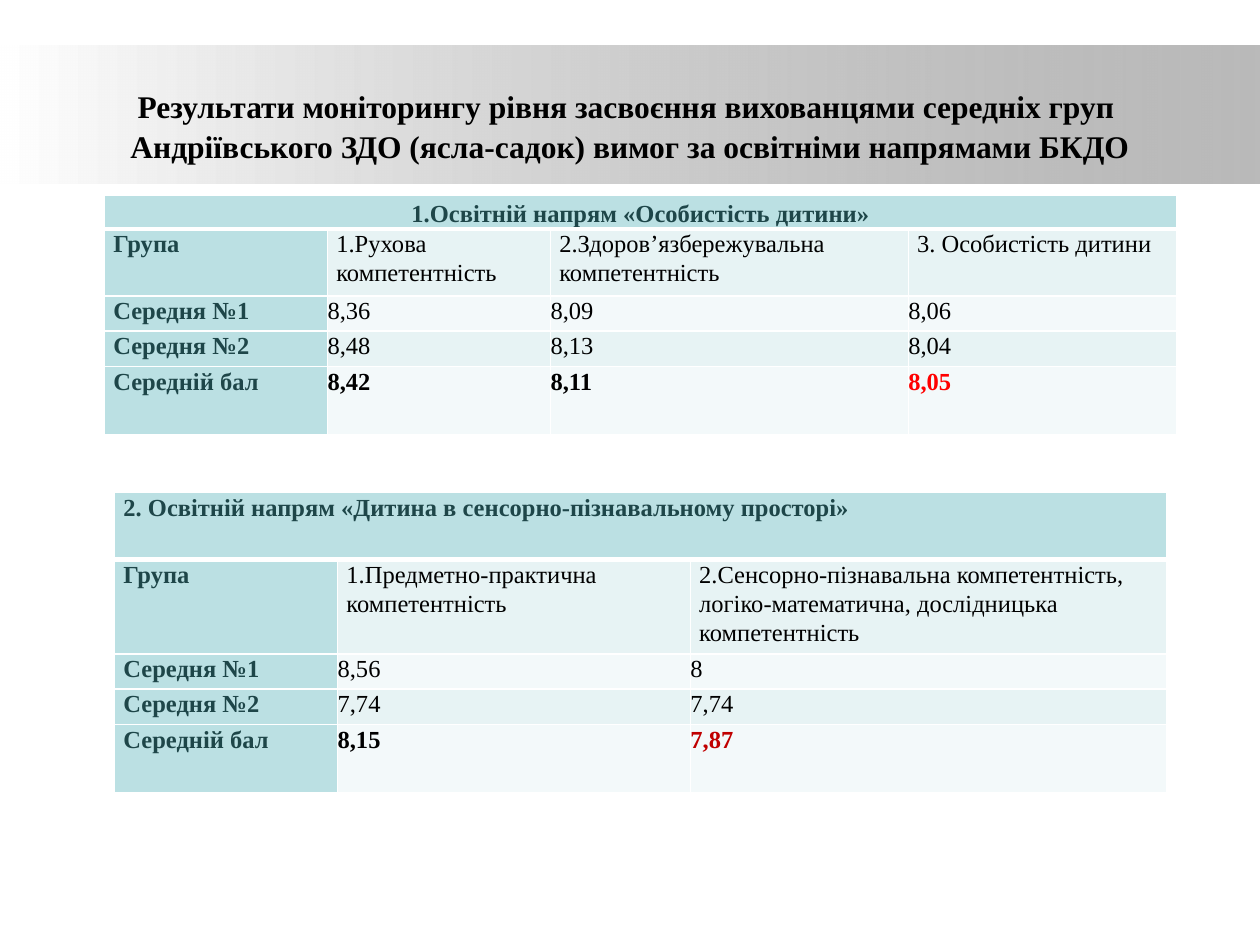
import pptx
import pptx.util
import pptx.dml.color
import pptx.enum.shapes
import pptx.enum.text
import pptx.oxml
import lxml.etree
from pptx.oxml.ns import qn

Inches, Pt = pptx.util.Inches, pptx.util.Pt
ALIGN, ANCHOR = pptx.enum.text.PP_ALIGN, pptx.enum.text.MSO_ANCHOR

HEADING = ("Результати моніторингу рівня засвоєння вихованцями середніх груп \n"
           "Андріївського ЗДО (ясла-садок) вимог за освітніми напрямами БКДО")
DARK, BLACK, WHITE = "1E4649", "000000", "FFFFFF"
LABEL_FILL, BANDS = "BBE0E3", ("F3F9FA", "E7F3F4")

DIRECTIONS = [
    {
        "title": "1.Освітній напрям «Особистість дитини»",
        "title_paragraph": {"alignment": ALIGN.CENTER, "line_spacing": 1.15},
        "title_anchor": ANCHOR.MIDDLE,
        "corner": (0.83, 1.55),
        "widths": (1.77, 1.77, 2.84, 2.13),
        "heights": (0.25, 0.53, 0.28, 0.28, 0.54),
        "weak_score": "FF0000",
        "rows": [
            ("Група", "1.Рухова компетентність",
             "2.Здоров’язбережувальна компетентність", "3. Особистість дитини"),
            ("Середня №1", "8,36", "8,09", "8,06"),
            ("Середня №2", "8,48", "8,13", "8,04"),
            ("Середній бал", "8,42", "8,11", "8,05"),
        ],
    },
    {
        "title": "2. Освітній напрям «Дитина в сенсорно-пізнавальному просторі»",
        "title_paragraph": {},
        "title_anchor": ANCHOR.TOP,
        "corner": (0.91, 3.91),
        "widths": (1.77, 2.8, 3.78),
        "heights": (0.53, 0.53, 0.28, 0.28, 0.54),
        "weak_score": "C00000",
        "rows": [
            ("Група", "1.Предметно-практична компетентність",
             "2.Сенсорно-пізнавальна компетентність, логіко-математична, "
             "дослідницька компетентність"),
            ("Середня №1", "8,56", "8"),
            ("Середня №2", "7,74", "7,74"),
            ("Середній бал", "8,15", "7,87"),
        ],
    },
]


def rgb(value):
    return pptx.dml.color.RGBColor.from_string(value)


def apply(target, values):
    for key, value in values.items():
        setattr(target, key, value)


def write(frame, text, size, color, bold, paragraph_format):
    paragraph = frame.paragraphs[0]
    paragraph.text = text
    apply(paragraph, {"line_spacing": 1.07, **paragraph_format})
    for run in paragraph.runs:
        apply(run.font, {"name": "Times New Roman", "size": Pt(size), "bold": bold})
        run.font.color.rgb = rgb(color)


def add_borders(cell, row):
    widths = {"lnL": 1, "lnR": 1, "lnT": 3 if row == 1 else 1, "lnB": 3 if row == 0 else 1}
    properties = cell._tc.get_or_add_tcPr()
    for side, width in widths.items():
        line = lxml.etree.SubElement(properties, qn("a:" + side), w=str(Pt(width)))
        fill = lxml.etree.SubElement(line, qn("a:solidFill"))
        lxml.etree.SubElement(fill, qn("a:srgbClr"), val=WHITE)


def format_cell(cell, row, text, fill, color, bold, inset, paragraph_format):
    add_borders(cell, row)
    cell.fill.solid()
    cell.fill.fore_color.rgb = rgb(fill)
    apply(cell, {"margin_left": Inches(inset), "margin_right": Inches(inset),
                 "margin_top": 0, "margin_bottom": 0})
    write(cell.text_frame, text, 14, color, bold, paragraph_format)


def add_band(slide):
    band = slide.shapes.add_shape(pptx.enum.shapes.MSO_SHAPE.RECTANGLE,
                                  0, Inches(0.36), Inches(10), Inches(1.1))
    band.shadow.inherit = False
    band.line.fill.background()
    band.fill.gradient()
    band.fill.gradient_angle = 0
    for stop, color, position in zip(band.fill.gradient_stops, (WHITE, "808080"), (0, 1)):
        stop.color.rgb = rgb(color)
        stop.position = position
    end_color = band._element.spPr.findall(".//" + qn("a:srgbClr"))[-1]
    lxml.etree.SubElement(end_color, qn("a:alpha"), val="54000")


def add_heading(slide):
    heading = slide.shapes.add_textbox(Inches(0.59), Inches(0.52), Inches(8.82), Inches(0.94))
    apply(heading.text_frame, {"word_wrap": True, "vertical_anchor": ANCHOR.MIDDLE})
    write(heading.text_frame, HEADING, 18, BLACK, True,
          {"alignment": ALIGN.CENTER, "space_after": Pt(8)})


def add_direction(slide, direction):
    widths, heights = direction["widths"], direction["heights"]
    left, top = direction["corner"]
    table = slide.shapes.add_table(len(heights), len(widths), Inches(left), Inches(top),
                                   Inches(sum(widths)), Inches(sum(heights))).table
    for column, width in zip(table.columns, widths):
        column.width = Inches(width)
    for line, height in zip(table.rows, heights):
        line.height = Inches(height)

    title = table.cell(0, 0)
    title.merge(table.cell(0, len(widths) - 1))
    format_cell(title, 0, direction["title"], LABEL_FILL, DARK, True, 0.07,
                {"space_after": Pt(8), **direction["title_paragraph"]})
    title.vertical_anchor = direction["title_anchor"]

    last_row, last_column = len(heights) - 1, len(widths) - 1
    for row, texts in enumerate(direction["rows"], 1):
        for column, text in enumerate(texts):
            label = column == 0
            padded = label or row == 1
            weak = (row, column) == (last_row, last_column)
            color = DARK if label else direction["weak_score"] if weak else BLACK
            format_cell(table.cell(row, column), row, text,
                        LABEL_FILL if label else BANDS[row % 2], color,
                        label or row == last_row, 0.07 if padded else 0,
                        {"space_after": Pt(8 if padded else 0)})


def main():
    deck = pptx.Presentation()
    apply(deck, {"slide_width": Inches(10), "slide_height": Inches(7.5)})
    slide = deck.slides.add_slide(deck.slide_layouts[6])
    add_band(slide)
    add_heading(slide)
    for direction in DIRECTIONS:
        add_direction(slide, direction)
    deck.save("out.pptx")


if __name__ == "__main__":
    main()
